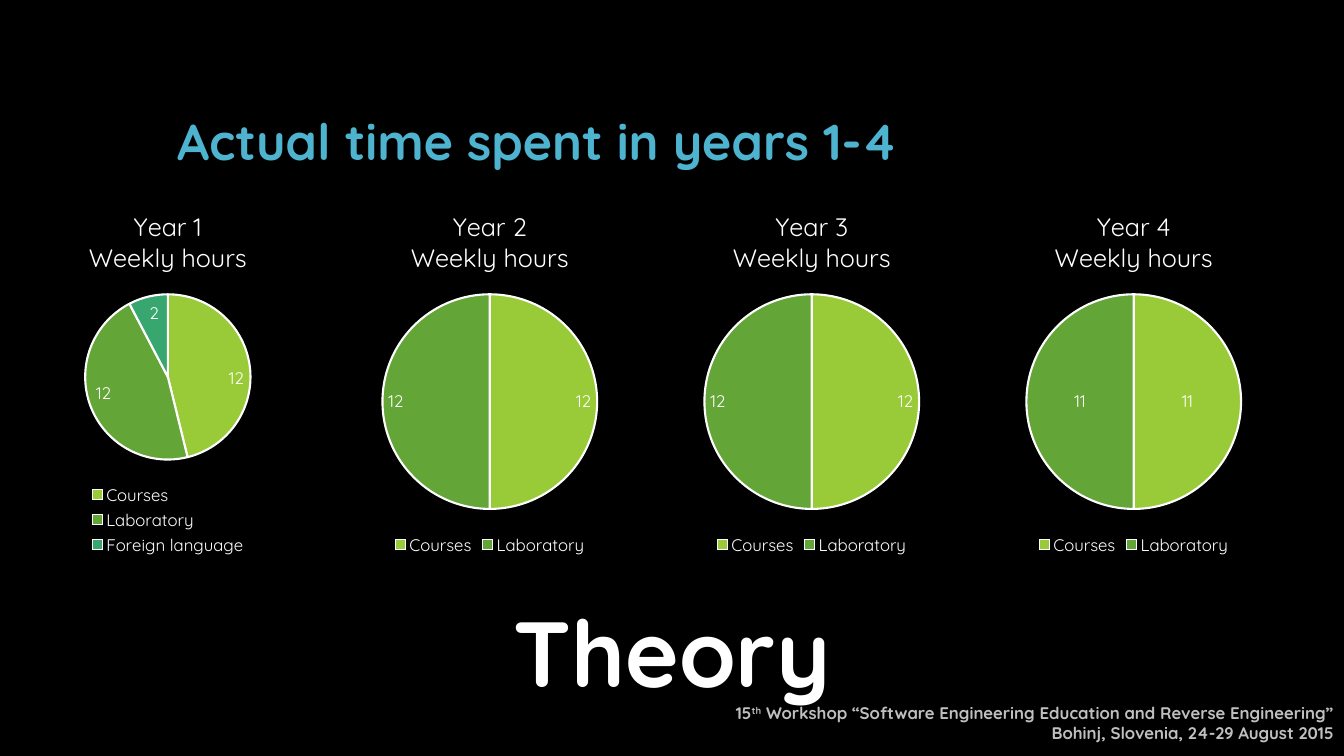
"""Build the slide of four pie charts on the weekly hours of years 1 to 4."""
from lxml import etree
from pptx import Presentation
from pptx.chart.data import CategoryChartData
from pptx.dml.color import RGBColor
from pptx.enum.chart import XL_CHART_TYPE, XL_LABEL_POSITION, XL_LEGEND_POSITION
from pptx.enum.text import MSO_ANCHOR, PP_ALIGN
from pptx.oxml import parse_xml
from pptx.oxml.ns import nsdecls, qn
from pptx.util import Inches, Pt

THEME = {
    "font": "Quicksand", "bg": "000000", "white": "FFFFFF",
    "title": "4EB3CF", "footer": "BFBFBF",
    "slices": ["99CB38", "63A537", "37A76F"],
    "title_pt": 36, "theory_pt": 66, "chart_title_pt": 18, "small_pt": 12,
}

prs = Presentation()
prs.slide_width, prs.slide_height = Inches(13.33), Inches(7.5)
s = prs.slides.add_slide(prs.slide_layouts[6])
s.background.fill.solid()
s.background.fill.fore_color.rgb = RGBColor.from_string(THEME["bg"])


def style(font, size, color, bold=False):
    """Set the face, size, colour and weight of a font."""
    font.name, font.size, font.bold = THEME["font"], Pt(size), bold
    font.color.rgb = RGBColor.from_string(color)


def add_text(box, lines, size, color, align, anchor, spacing=1.0):
    """Add a bold text box; each line is a list of (text, baseline) runs."""
    tf = s.shapes.add_textbox(*[Inches(v) for v in box]).text_frame
    tf.word_wrap, tf.vertical_anchor = True, anchor
    for i, line in enumerate(lines):
        p = tf.add_paragraph() if i else tf.paragraphs[0]
        p.alignment, p.line_spacing = align, spacing
        for text, baseline in line:
            r = p.add_run()
            r.text = text
            style(r.font, size, color, True)
            if baseline:
                r.font._element.set("baseline", str(baseline))


add_text((7.08, 6.92, 6.25, 0.5),
         [[("15", 0), ("th", 30000),
           (" Workshop “Software Engineering Education and Reverse Engineering”", 0)],
          [("Bohinj, Slovenia, 24-29 August 2015", 0)]],
         THEME["small_pt"], THEME["footer"], PP_ALIGN.RIGHT, MSO_ANCHOR.MIDDLE)
add_text((1.66, 0.25, 10, 1.5), [[("Actual time spent in years 1-4", 0)]],
         THEME["title_pt"], THEME["title"], PP_ALIGN.LEFT, MSO_ANCHOR.BOTTOM, 0.9)

CATEGORIES = ["Courses", "Laboratory", "Foreign language"]
YEARS = [(12, 12, 2), (12, 12), (12, 12), (11, 11)]
LEFT, TOP, PITCH, WIDTH, HEIGHT = 0.25, 1.92, 9.58 / 3, 2.83, 3.63
PIE_TOP = 1.0 / HEIGHT

for i, hours in enumerate(YEARS):
    data = CategoryChartData()
    data.categories = CATEGORIES[:len(hours)]
    data.add_series("Series 1", hours)
    frame = s.shapes.add_chart(
        XL_CHART_TYPE.PIE, Inches(LEFT + i * PITCH), Inches(TOP),
        Inches(WIDTH), Inches(HEIGHT), data)
    chart = frame.chart
    style(chart.font, 10, THEME["white"])

    chart.has_title = True
    tf = chart.chart_title.text_frame
    for n, text in enumerate([f"Year {i + 1}", "Weekly hours"]):
        p = tf.add_paragraph() if n else tf.paragraphs[0]
        r = p.add_run()
        r.text = text
        style(r.font, THEME["chart_title_pt"], THEME["white"])

    chart.has_legend = True
    chart.legend.position = XL_LEGEND_POSITION.BOTTOM
    chart.legend.include_in_layout = False
    style(chart.legend.font, THEME["small_pt"], THEME["white"])

    plot = chart.plots[0]
    plot.vary_by_categories = True
    plot.has_data_labels = True
    labels = plot.data_labels
    labels.show_value, labels.show_percentage = True, False
    labels.position = (XL_LABEL_POSITION.CENTER if i == len(YEARS) - 1
                       else XL_LABEL_POSITION.INSIDE_END)
    style(labels.font, THEME["small_pt"], THEME["white"])
    for n in range(len(hours)):
        fmt = plot.series[0].points[n].format
        fmt.fill.solid()
        fmt.fill.fore_color.rgb = RGBColor.from_string(THEME["slices"][n])
        fmt.line.color.rgb = RGBColor.from_string(THEME["white"])
        fmt.line.width = Pt(1.5)

    diameter = 1.64 if len(hours) == 3 else 2.13
    share = {"x": (1 - diameter / WIDTH) / 2, "y": PIE_TOP,
             "w": diameter / WIDTH, "h": diameter / HEIGHT}
    area = chart._chartSpace.find(".//" + qn("c:plotArea"))
    for old in area.findall(qn("c:layout")):
        area.remove(old)
    layout = parse_xml(f"<c:layout {nsdecls('c')}><c:manualLayout/></c:layout>")
    settings = {"layoutTarget": "inner", "xMode": "edge", "yMode": "edge", **share}
    for tag, val in settings.items():
        etree.SubElement(layout[0], qn(f"c:{tag}")).set("val", str(val))
    area.insert(0, layout)

add_text((2, 5.85, 9.33, 1.21), [[("Theory", 0)]],
         THEME["theory_pt"], THEME["white"], PP_ALIGN.CENTER, MSO_ANCHOR.MIDDLE)

prs.save("out.pptx")
